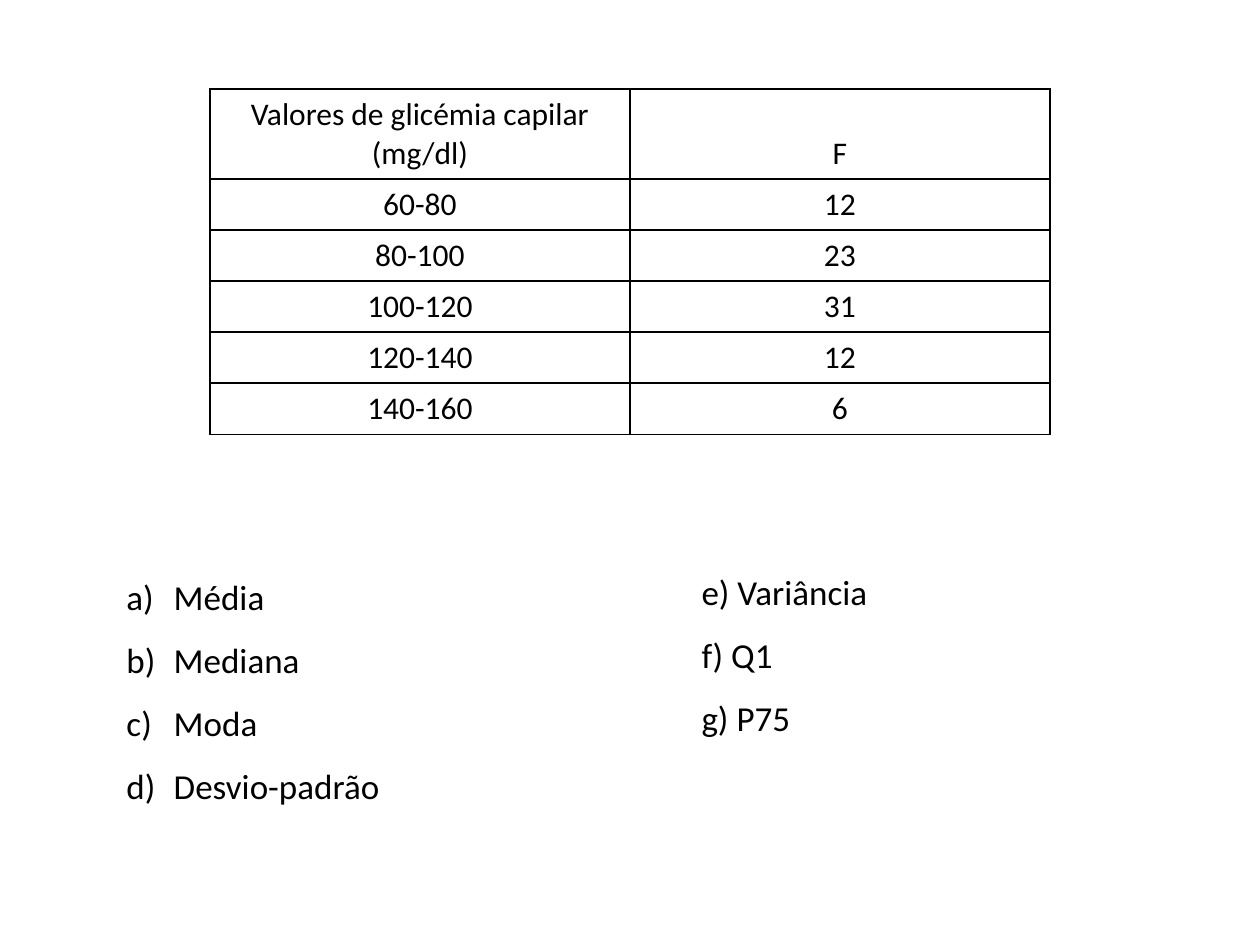
from lxml.etree import SubElement
from pptx import Presentation
from pptx.dml.color import RGBColor
from pptx.enum.text import MSO_ANCHOR, MSO_AUTO_SIZE, PP_ALIGN
from pptx.oxml.ns import qn
from pptx.util import Pt

BLACK = RGBColor(0, 0, 0)
WHITE = RGBColor(255, 255, 255)
FONT = "Calibri"
ROWS = [
    ("Valores de glicémia capilar (mg/dl)", "F"),
    ("60-80", "12"),
    ("80-100", "23"),
    ("100-120", "31"),
    ("120-140", "12"),
    ("140-160", "6"),
]
LEFT = ["Média", "Mediana", "Moda", "Desvio-padrão"]
RIGHT = ["e) Variância", "f) Q1", "g) P75"]


def write(frame, lines, size=20, align=PP_ALIGN.LEFT, space=1.0, indent=0):
    for i, line in enumerate(lines):
        para = frame.paragraphs[0] if i == 0 else frame.add_paragraph()
        para.alignment = align
        para.line_spacing = space
        run = para.add_run()
        run.text = line
        run.font.name = FONT
        run.font.size = Pt(size)
        run.font.color.rgb = BLACK
        if indent:
            props = para._p.get_or_add_pPr()
            props.set("marL", str(Pt(indent)))
            props.set("indent", str(-Pt(indent)))
            SubElement(props, qn("a:buFont"), typeface="+mj-lt")
            SubElement(props, qn("a:buAutoNum"), type="alphaLcParenR")


class Page:
    def __init__(self, deck, color=BLACK, line=1):
        self.slide = deck.slides.add_slide(deck.slide_layouts[6])
        self.color = color
        self.line = line

    def border(self, cell):
        props = cell._tc.get_or_add_tcPr()
        for i, side in enumerate(("lnL", "lnR", "lnT", "lnB")):
            edge = SubElement(props, qn(f"a:{side}"), w=str(Pt(self.line)))
            fill = SubElement(edge, qn("a:solidFill"))
            SubElement(fill, qn("a:srgbClr"), val=str(self.color))
            props.insert(i, edge)

    def table(self, rows, x, y, width, head, height):
        total = head + height * (len(rows) - 1)
        shape = self.slide.shapes.add_table(
            len(rows), len(rows[0]), Pt(x), Pt(y), Pt(width), Pt(total))
        grid = shape.table
        grid.first_row = grid.horz_banding = False
        for r, row in enumerate(rows):
            grid.rows[r].height = Pt(height if r else head)
            for c, text in enumerate(row):
                cell = grid.cell(r, c)
                cell.fill.solid()
                cell.fill.fore_color.rgb = WHITE
                cell.vertical_anchor = MSO_ANCHOR.BOTTOM if r == 0 else MSO_ANCHOR.TOP
                write(cell.text_frame, [text], size=18, align=PP_ALIGN.CENTER)
                self.border(cell)

    def text(self, lines, x, y, width, height, **style):
        box = self.slide.shapes.add_textbox(Pt(x), Pt(y), Pt(width), Pt(height))
        frame = box.text_frame
        frame.word_wrap = True
        frame.auto_size = MSO_AUTO_SIZE.SHAPE_TO_FIT_TEXT
        write(frame, lines, **style)


def main():
    deck = Presentation()
    deck.slide_width = Pt(720)
    deck.slide_height = Pt(540)
    page = Page(deck)
    page.table(ROWS, 120, 51, 480, 51, 29.2)
    page.text(LEFT, 65.2, 313.2, 297.4, 152.6, space=1.5, indent=27)
    page.text(RIGHT, 393.8, 310.3, 170, 116.6, space=1.5)
    deck.save("out.pptx")


if __name__ == "__main__":
    main()
